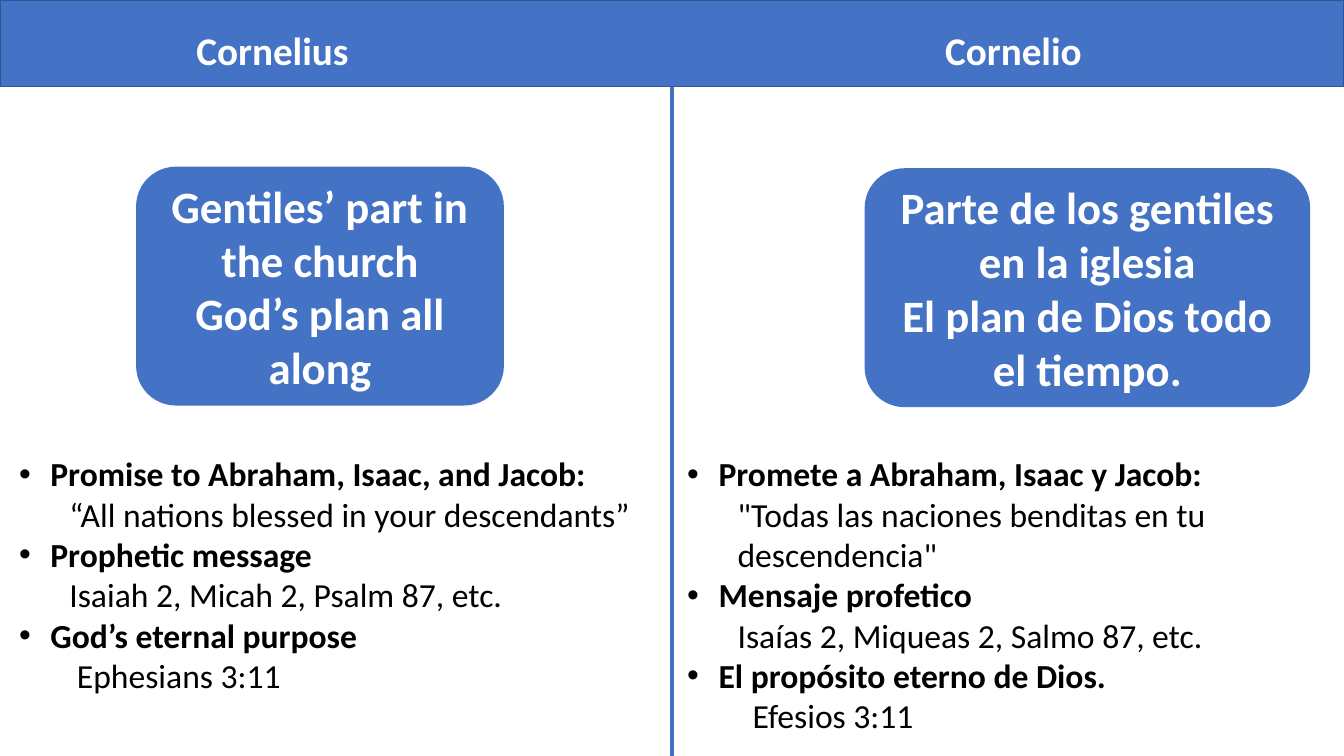
import pptx
import pptx.dml.color
import pptx.enum.shapes
import pptx.enum.text
import pptx.oxml.ns
import pptx.util
from lxml import etree
from pptx.util import Cm, Pt

FONT = "Calibri"
BLUE, DARK_BLUE, WHITE, BLACK = "4472C4", "325491", "FFFFFF", "000000"
SLIDE_WIDTH, SLIDE_HEIGHT, BANNER_HEIGHT = 33.87, 19.05, 2.18
BULLET_INDENT, DETAIL_INDENT = 0.79, 1.27

# Boxes are left, top, width, height in cm.
# Points are heading, detail, extra indent of the detail in cm.
LANGUAGES = [
    {
        "title": "Cornelius",
        "title_box": (4.7, 0.53, 5.08, 1.45),
        "theme": ["Gentiles’ part in the church", "God’s plan all along"],
        "theme_box": (3.43, 4.2, 9.27, 6.02),
        "points": [
            ("Promise to Abraham, Isaac, and Jacob:",
             "“All nations blessed in your descendants”", 0),
            ("Prophetic message", "Isaiah 2, Micah 2, Psalm 87, etc.", 0),
            ("God’s eternal purpose", "Ephesians 3:11", 0.19),
        ],
        "points_box": (0.23, 11.3, 16.08, 6.4),
    },
    {
        "title": "Cornelio",
        "title_box": (23.57, 0.53, 5.08, 1.45),
        "theme": ["Parte de los gentiles en la iglesia",
                  "El plan de Dios todo el tiempo."],
        "theme_box": (21.79, 4.24, 11.23, 6.02),
        "points": [
            ("Promete a Abraham, Isaac y Jacob:",
             '"Todas las naciones benditas en tu descendencia"', 0),
            ("Mensaje profetico", "Isaías 2, Miqueas 2, Salmo 87, etc.", 0),
            ("El propósito eterno de Dios.", "Efesios 3:11", 0.38),
        ],
        "points_box": (17.07, 11.3, 16.08, 7.44),
    },
]


def color(hex_code):
    return pptx.dml.color.RGBColor.from_string(hex_code)


def style(para, size, hex_code, bold):
    for span in para.runs:
        span.font.name = FONT
        span.font.size = Pt(size)
        span.font.bold = bold
        span.font.color.rgb = color(hex_code)


def add_block(page, kind, box):
    block = page.shapes.add_shape(kind, *map(Cm, box))
    block.shadow.inherit = False
    block.fill.solid()
    block.fill.fore_color.rgb = color(BLUE)
    block.line.fill.background()
    return block


def add_text(page, box):
    frame = page.shapes.add_textbox(*map(Cm, box)).text_frame
    frame.word_wrap = True
    return frame


def indent(para, left, bullet=False):
    """Set the left margin in cm, with a hanging bullet if asked."""
    properties = para._p.get_or_add_pPr()
    properties.set("marL", str(Cm(left)))
    properties.set("indent", str(-Cm(left) if bullet else 0))
    if bullet:
        font = etree.SubElement(properties, pptx.oxml.ns.qn("a:buFont"))
        font.set("typeface", "Arial")
        mark = etree.SubElement(properties, pptx.oxml.ns.qn("a:buChar"))
        mark.set("char", "•")


def add_banner(page):
    banner = add_block(page, pptx.enum.shapes.MSO_SHAPE.RECTANGLE,
                       (0, 0, SLIDE_WIDTH, BANNER_HEIGHT))
    banner.line.color.rgb = color(DARK_BLUE)
    banner.line.width = Pt(1)


def add_divider(page):
    middle = Cm(SLIDE_WIDTH / 2)
    divider = page.shapes.add_connector(
        pptx.enum.shapes.MSO_CONNECTOR.STRAIGHT,
        middle, Cm(BANNER_HEIGHT), middle, Cm(SLIDE_HEIGHT))
    divider.line.color.rgb = color(BLUE)
    divider.line.width = Pt(2.5)
    etree.SubElement(divider._element.spPr, pptx.oxml.ns.qn("a:effectLst"))


def add_theme(page, lines, box):
    block = add_block(page, pptx.enum.shapes.MSO_SHAPE.ROUNDED_RECTANGLE, box)
    frame = block.text_frame
    frame.word_wrap = True
    frame.vertical_anchor = pptx.enum.text.MSO_ANCHOR.MIDDLE
    frame.text = "\n".join(lines)
    for para in frame.paragraphs:
        para.alignment = pptx.enum.text.PP_ALIGN.CENTER
        style(para, 32, WHITE, True)


def add_points(page, points, box):
    frame = add_text(page, box)
    frame.text = "\n".join(text for point in points for text in point[:2])
    headings, details = frame.paragraphs[::2], frame.paragraphs[1::2]
    for heading, detail, (_, _, extra) in zip(headings, details, points):
        indent(heading, BULLET_INDENT, bullet=True)
        style(heading, 24, BLACK, True)
        detail.level = 1
        indent(detail, DETAIL_INDENT + extra)
        style(detail, 24, BLACK, False)


def main():
    deck = pptx.Presentation()
    deck.slide_width, deck.slide_height = Cm(SLIDE_WIDTH), Cm(SLIDE_HEIGHT)
    page = deck.slides.add_slide(deck.slide_layouts[6])
    add_banner(page)
    add_divider(page)
    for language in LANGUAGES:
        title = add_text(page, language["title_box"])
        title.text = language["title"]
        style(title.paragraphs[0], 28, WHITE, True)
        add_theme(page, language["theme"], language["theme_box"])
        add_points(page, language["points"], language["points_box"])
    deck.save("out.pptx")


if __name__ == "__main__":
    main()
